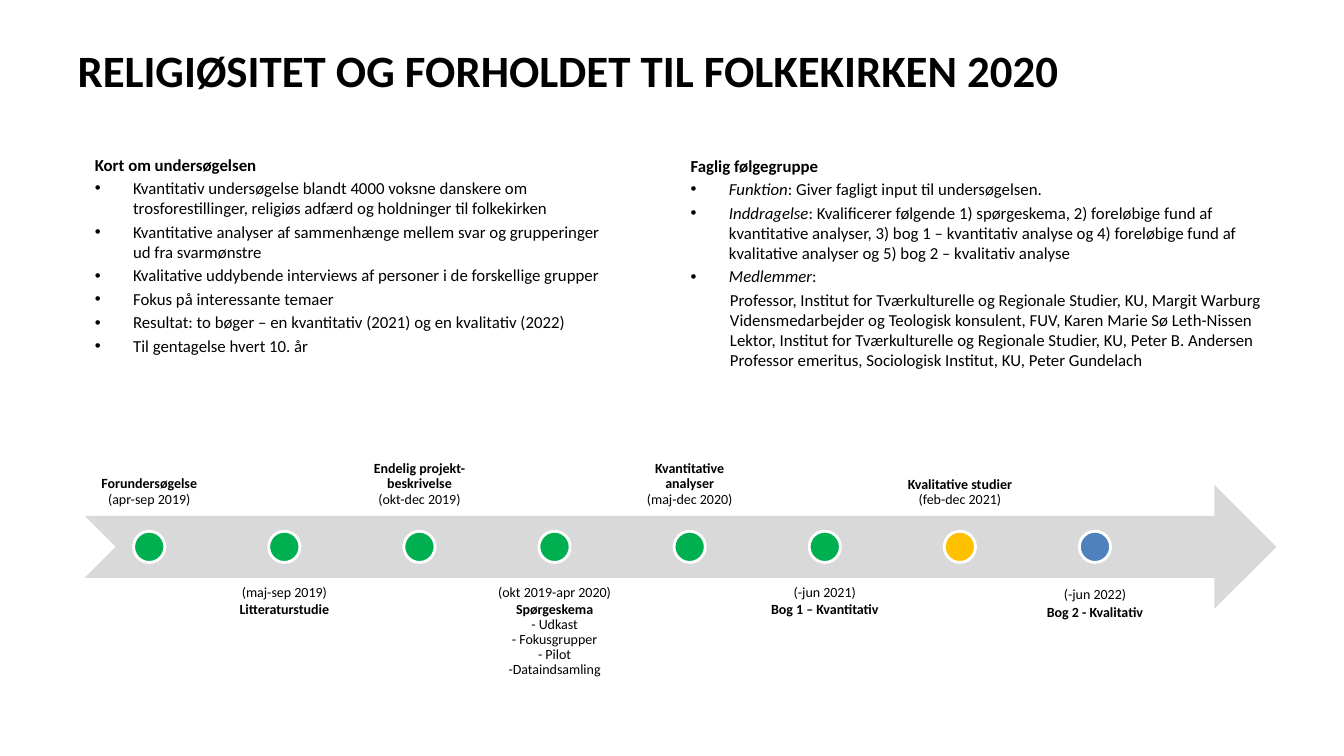
from lxml.etree import SubElement
from pptx import Presentation
from pptx.dml.color import RGBColor
from pptx.enum.shapes import MSO_SHAPE as SHAPE
from pptx.enum.text import MSO_ANCHOR as ANCHOR, MSO_AUTO_SIZE as AUTO, PP_ALIGN as ALIGN
from pptx.oxml.ns import qn
from pptx.util import Inches, Pt

BLACK = RGBColor(0x00, 0x00, 0x00)
WHITE = RGBColor(0xFF, 0xFF, 0xFF)
GREY = RGBColor(0xD9, 0xD9, 0xD9)
GREEN = RGBColor(0x00, 0xB0, 0x50)
YELLOW = RGBColor(0xFF, 0xC0, 0x00)
BLUE = RGBColor(0x4F, 0x81, 0xBD)
FONT = "Calibri"

# Runs are (text, style): "b" bold, "i" italic, "" plain. "\n" breaks the line.
TITLE = [("RELIGIØSITET OG FORHOLDET TIL FOLKEKIRKEN 2020", "b")]
ABOUT = [
    ("head", [("Kort om undersøgelsen", "b")]),
    ("bullet", [("Kvantitativ undersøgelse blandt 4000 voksne danskere om trosforestillinger, "
                 "religiøs adfærd og holdninger til folkekirken", "")]),
    ("bullet", [("Kvantitative analyser af sammenhænge mellem svar og grupperinger "
                 "ud fra svarmønstre", "")]),
    ("bullet", [("Kvalitative uddybende interviews af personer i de forskellige grupper", "")]),
    ("bullet", [("Fokus på interessante temaer", "")]),
    ("bullet", [("Resultat: to bøger – en kvantitativ (2021) og en kvalitativ (2022)", "")]),
    ("bullet", [("Til gentagelse hvert 10. år", "")]),
]
GROUP = [
    ("head", [("Faglig følgegruppe", "b")]),
    ("bullet", [("Funktion", "i"), (": Giver fagligt input til undersøgelsen.", "")]),
    ("bullet", [("Inddragelse", "i"),
                (": Kvalificerer følgende 1) spørgeskema, 2) foreløbige fund af kvantitative "
                 "analyser, 3) bog 1 – kvantitativ analyse og 4) foreløbige fund af "
                 "kvalitative analyser og 5) bog 2 – kvalitativ analyse", "")]),
    ("bullet", [("Medlemmer", "i"), (":", "")]),
    ("first member", [("Professor, Institut for Tværkulturelle og Regionale Studier, KU, "
                       "Margit Warburg", "")]),
    ("member", [("Vidensmedarbejder og Teologisk konsulent, FUV, Karen Marie Sø Leth-Nissen", "")]),
    ("member", [("Lektor, Institut for Tværkulturelle og Regionale Studier, KU, "
                 "Peter B. Andersen", "")]),
    ("member", [("Professor emeritus, Sociologisk Institut, KU, Peter Gundelach", "")]),
]
# Dot colour, line spacing, paragraphs; labels alternate above and below the arrow.
MILESTONES = [
    (GREEN, 0.9, [[("Forundersøgelse", "b")], [("(apr-sep 2019)", "")]]),
    (GREEN, 0.9, [[("(maj-sep 2019)", "")], [("Litteraturstudie", "b")]]),
    (GREEN, 0.9, [[("Endelig projekt-beskrivelse", "b")], [("(okt-dec 2019)", "")]]),
    (GREEN, 0.9, [[("(okt 2019-apr 2020)", "")],
                  [("Spørgeskema\n", "b"),
                   ("- Udkast\n- Fokusgrupper\n- Pilot\n-Dataindsamling", "")]]),
    (GREEN, 0.9, [[("Kvantitative analyser", "b")], [("(maj-dec 2020)", "")]]),
    (GREEN, 0.9, [[("(-jun 2021)", "")], [("Bog 1 – Kvantitativ", "b")]]),
    (YELLOW, 0.9, [[("Kvalitative studier ", "b"), ("(feb-dec 2021)", "")]]),
    (BLUE, 1.0, [[("(-jun 2022)", "")], [("Bog 2 - Kvalitativ", "b")]]),
]

# Kind of paragraph: left margin, first-line indent (inches), space before (points)
LIST_STYLES = {
    "head": (0, 0, 0),
    "bullet": (0.38, -0.38, 2.4),
    "first member": (0.39, 0, 2.4),
    "member": (0.39, 0, 0),
}
ARROW_LEFT, ARROW_TOP, ARROW_W, ARROW_H = 0.84, 4.81, 11.82, 1.23
FIRST_X, STEP = 1.48, 1.34
DOT = 0.31
LABEL_W, LABEL_H, LABEL_PAD = 1.29, 1.23, 0.08
ABOVE_TOP, BELOW_TOP = 3.89, 5.73


def place(sp, left, top, width, height):
    sp.left, sp.top, sp.width, sp.height = map(Inches, (left, top, width, height))


def add_runs(p, runs, size):
    for text, style in runs:
        for n, line in enumerate(text.split("\n")):
            if n:
                p.add_line_break()
            if line:
                r = p.add_run()
                r.text = line
                r.font.name, r.font.size = FONT, Pt(size)
                r.font.bold, r.font.italic = style == "b", style == "i"
                r.font.color.rgb = BLACK


def paragraphs(tf, items):
    """Pair each item with its paragraph, adding paragraphs as needed."""
    for n, item in enumerate(items):
        yield (tf.add_paragraph() if n else tf.paragraphs[0]), item


def fill_list(sp, items, box):
    place(sp, *box)
    tf = sp.text_frame
    tf.auto_size = AUTO.NONE
    for p, (kind, runs) in paragraphs(tf, items):
        margin, indent, before = LIST_STYLES[kind]
        pPr = p._p.get_or_add_pPr()
        pPr.set("marL", str(Inches(margin)))
        pPr.set("indent", str(Inches(indent)))
        if kind == "bullet":
            SubElement(pPr, qn("a:buFont"), typeface="Arial")
            SubElement(pPr, qn("a:buChar"), char="•")
        else:
            SubElement(pPr, qn("a:buNone"))
        p.space_before = Pt(before)
        add_runs(p, runs, 12)


def add_filled(s, preset, box, colour):
    sp = s.shapes.add_shape(preset, *map(Inches, box))
    sp.shadow.inherit = False
    sp.fill.solid()
    sp.fill.fore_color.rgb = colour
    sp.line.fill.background()
    return sp


def add_label(s, centre, above, spacing, items):
    top = ABOVE_TOP if above else BELOW_TOP
    box = (centre - LABEL_W / 2, top, LABEL_W, LABEL_H)
    tf = s.shapes.add_textbox(*map(Inches, box)).text_frame
    tf.word_wrap = True
    tf.vertical_anchor = ANCHOR.BOTTOM if above else ANCHOR.TOP
    tf.margin_left = tf.margin_right = tf.margin_top = tf.margin_bottom = Inches(LABEL_PAD)
    for p, runs in paragraphs(tf, items):
        p.alignment = ALIGN.CENTER
        p.line_spacing = spacing
        p.space_after = Pt(1)
        add_runs(p, runs, 10)


def main():
    prs = Presentation()
    prs.slide_width, prs.slide_height = Inches(13.33), Inches(7.5)
    s = prs.slides.add_slide(prs.slide_layouts.get_by_name("Two Content"))
    title, about, group = list(s.placeholders)[:3]

    place(title, 0.67, 0, 12, 1.39)
    title.text_frame.auto_size = AUTO.NONE
    title.text_frame.vertical_anchor = ANCHOR.MIDDLE
    p = title.text_frame.paragraphs[0]
    p.alignment = ALIGN.LEFT
    add_runs(p, TITLE, 32)

    fill_list(about, ABOUT, (0.84, 1.48, 5.4, 2.85))
    fill_list(group, GROUP, (6.75, 1.49, 6.09, 2.84))

    arrow = (ARROW_LEFT, ARROW_TOP, ARROW_W, ARROW_H)
    add_filled(s, SHAPE.NOTCHED_RIGHT_ARROW, arrow, GREY)
    dot_top = ARROW_TOP + (ARROW_H - DOT) / 2
    for n, (colour, spacing, items) in enumerate(MILESTONES):
        centre = FIRST_X + n * STEP
        add_label(s, centre, n % 2 == 0, spacing, items)
        dot = add_filled(s, SHAPE.OVAL, (centre - DOT / 2, dot_top, DOT, DOT), colour)
        dot.line.color.rgb = WHITE
        dot.line.width = Pt(2)

    prs.save("out.pptx")


if __name__ == "__main__":
    main()
